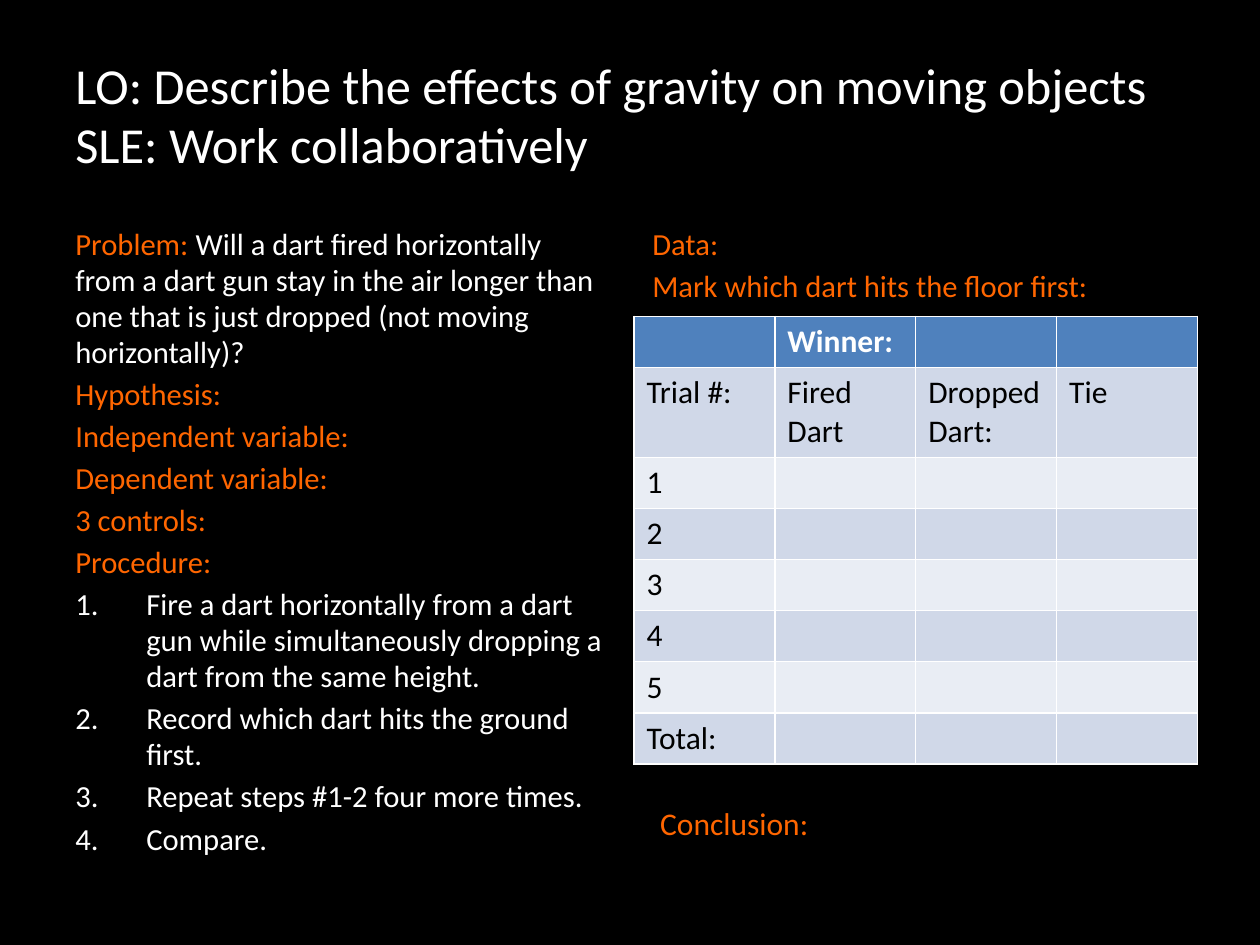
from dataclasses import dataclass
from lxml import etree
from pptx import Presentation
from pptx.dml.color import RGBColor
from pptx.enum.text import MSO_ANCHOR
from pptx.oxml.ns import qn
from pptx.util import Cm, Pt

MIDDLE = MSO_ANCHOR.MIDDLE


@dataclass
class Theme:
    font = "Calibri"
    black = RGBColor(0x00, 0x00, 0x00)
    white = RGBColor(0xFF, 0xFF, 0xFF)
    orange = RGBColor(0xFF, 0x66, 0x00)
    head = RGBColor(0x4F, 0x81, 0xBD)
    bands = (RGBColor(0xE9, 0xED, 0xF4), RGBColor(0xD0, 0xD8, 0xE8))
    title = Pt(28.8)
    body = Pt(17.5)
    cell = Pt(18)
    gap = Pt(3.5)


def style(par, size, color, bold=False):
    par.font.name = Theme.font
    par.font.size = size
    par.font.bold = bold
    par.font.color.rgb = color


def add_text(left, top, width, height, lines, size, spacing=0.98, wrap=True):
    """Add a text box from (text, color) lines and return its frame."""
    box = slide.shapes.add_textbox(Cm(left), Cm(top), Cm(width), Cm(height))
    frame = box.text_frame
    frame.word_wrap = wrap
    for i, (text, color) in enumerate(lines):
        par = frame.add_paragraph() if i else frame.paragraphs[0]
        par.text = text
        par.line_spacing = spacing
        style(par, size, color)
    return frame


deck = Presentation()
deck.slide_width, deck.slide_height = Cm(25.4), Cm(19.05)
slide = deck.slides.add_slide(deck.slide_layouts[6])
slide.background.fill.solid()
slide.background.fill.fore_color.rgb = Theme.black

# Title
goal = "LO: Describe the effects of gravity on moving objects\vSLE: Work collaboratively"
title = add_text(1.27, 0.76, 22.86, 3.18, [(goal, Theme.white)], Theme.title)
title.vertical_anchor = MIDDLE

# Left column: plan and numbered steps
heads = ["Problem: ", "Hypothesis:", "Independent variable:",
         "Dependent variable:", "3 controls:", "Procedure:"]
steps = [
    "Fire a dart horizontally from a dart gun while simultaneously dropping a "
    "dart from the same height.",
    "Record which dart hits the ground first.",
    "Repeat steps #1-2 four more times.",
    "Compare.",
]
lines = [(t, Theme.orange) for t in heads] + [(t, Theme.white) for t in steps]
plan = add_text(1.27, 4.45, 11.23, 12.57, lines, Theme.body)
ask = plan.paragraphs[0].add_run()
ask.text = ("Will a dart fired horizontally from a dart gun stay in the air "
            "longer than one that is just dropped (not moving horizontally)?")
ask.font.color.rgb = Theme.white
for par in plan.paragraphs[len(heads):]:
    props = par._p.get_or_add_pPr()
    props.set("marL", str(Cm(1.43)))
    props.set("indent", str(-Cm(1.43)))
    # The bullet must come after the spacing elements
    par.space_before = Theme.gap
    etree.SubElement(props, qn("a:buFont"), typeface="+mj-lt")
    etree.SubElement(props, qn("a:buAutoNum"), type="arabicPeriod")
    # Keep the paragraph font last in its properties
    props.append(props.find(qn("a:defRPr")))

# Right column: heading of the data
lines = [(t, Theme.orange) for t in ("Data:", "Mark which dart hits the floor first:")]
data = add_text(12.9, 4.45, 11.23, 1.9, lines, Theme.body)
for par in [*plan.paragraphs, *data.paragraphs]:
    par.space_before = Theme.gap

# Results table
rows = [["", "Winner:"], ["Trial #:", "Fired Dart", "Dropped Dart:", "Tie"],
        *[[str(n)] for n in range(1, 6)], ["Total:"]]
table = slide.shapes.add_table(len(rows), 4, Cm(12.78), Cm(6.38), Cm(11.36), Cm(9.02)).table
for r, row in enumerate(rows):
    table.rows[r].height = Cm(1.81 if r == 1 else 1.03)
    for c in range(4):
        cell = table.cell(r, c)
        cell.fill.solid()
        cell.fill.fore_color.rgb = Theme.bands[r % 2] if r else Theme.head
        cell.text = row[c] if c < len(row) else ""
        style(cell.text_frame.paragraphs[0], Theme.cell,
              Theme.black if r else Theme.white, bold=r == 0)

# Conclusion
add_text(13.06, 16.08, 3.53, 1.02, [("Conclusion:", Theme.orange)], Theme.cell, 1, False)

deck.save("out.pptx")
